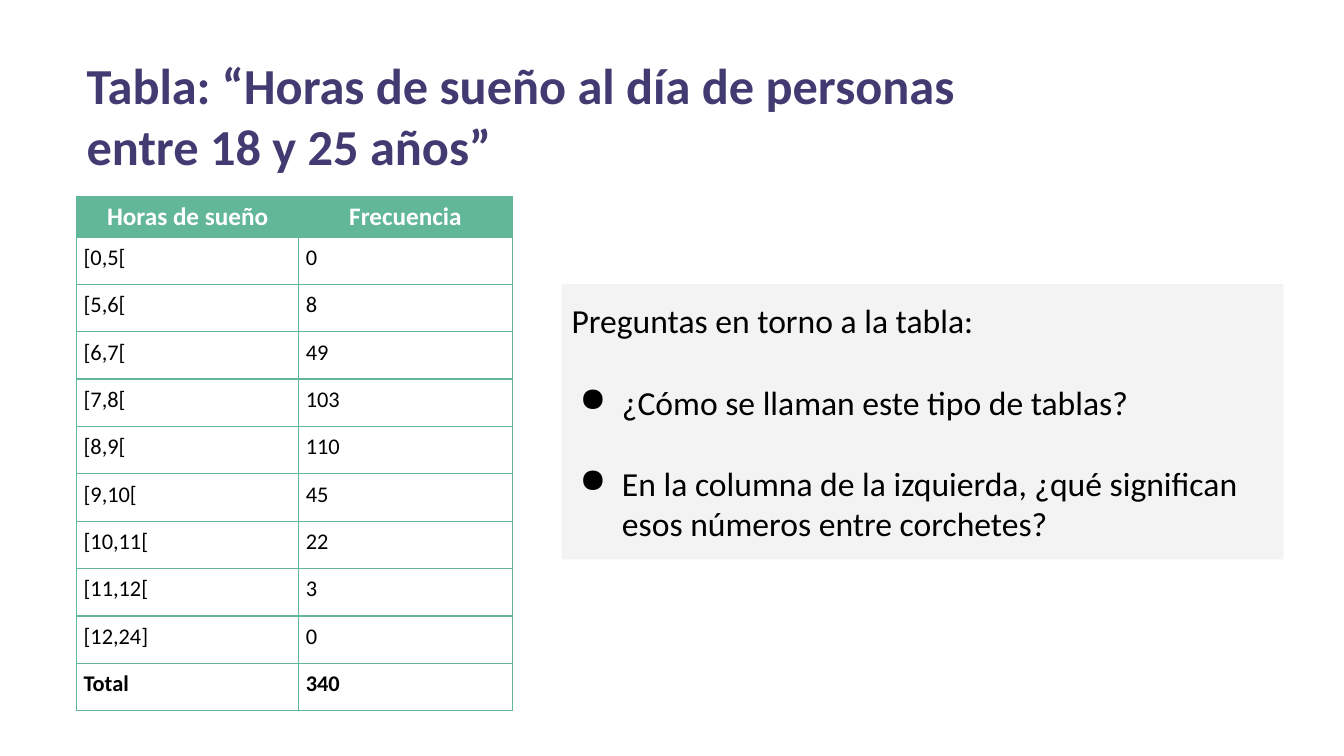
from lxml.etree import SubElement
from pptx import Presentation
from pptx.dml.color import RGBColor
from pptx.enum.shapes import MSO_SHAPE as Preset
from pptx.enum.text import MSO_ANCHOR as Anchor, PP_ALIGN as Align
from pptx.oxml import parse_xml
from pptx.oxml.ns import nsdecls, qn
from pptx.util import Inches, Pt

WIDTH, HEIGHT = Inches(13.33), Inches(7.5)
FONT = "Calibri"
PURPLE, GREEN, GREY, BLACK, WHITE = "423B71", "63B799", "F3F3F3", "000000", "FFFFFF"

TITLE = "Tabla: “Horas de sueño al día de personas entre 18 y 25 años”"
HEADINGS = ("Horas de sueño", "Frecuencia")
FREQUENCIES = [
    ("[0,5[", "0"), ("[5,6[", "8"), ("[6,7[", "49"), ("[7,8[", "103"),
    ("[8,9[", "110"), ("[9,10[", "45"), ("[10,11[", "22"),
    ("[11,12[", "3"), ("[12,24]", "0"), ("Total", "340"),
]
INTRO = "Preguntas en torno a la tabla:"
QUESTIONS = [
    "¿Cómo se llaman este tipo de tablas?",
    "En la columna de la izquierda, ¿qué significan esos números entre corchetes?",
]


def across(percent):
    return round(WIDTH * percent / 100)


def down(percent):
    return round(HEIGHT * percent / 100)


def area(left, top, width, height):
    """Turn percentages of the slide into a box."""
    return across(left), down(top), across(width), down(height)


def colour(code):
    return RGBColor.from_string(code)


def add_span(para, text, size, code, bold=False):
    span = para.add_run()
    span.text = text
    span.font.name = FONT
    span.font.size = Pt(size)
    span.font.bold = bold
    span.font.color.rgb = colour(code)


def set_margins(holder, side, end):
    holder.margin_left = holder.margin_right = Inches(side)
    holder.margin_top = holder.margin_bottom = Inches(end)


def add_borders(cell, code):
    props = cell._tc.get_or_add_tcPr()
    for index, side in enumerate("LRTB"):
        props.insert(index, parse_xml(
            f'<a:ln{side} {nsdecls("a")} w="{Pt(1)}"><a:solidFill>'
            f'<a:srgbClr val="{code}"/></a:solidFill></a:ln{side}>'))


def add_bullet(para):
    props = para._p.get_or_add_pPr()
    props.set("marL", str(Inches(0.5)))
    props.set("indent", str(Inches(-0.42)))
    tint = SubElement(props, qn("a:buClr"))
    SubElement(tint, qn("a:srgbClr"), val=BLACK)
    SubElement(props, qn("a:buChar"), char="●")


def add_title(page, box):
    frame = page.shapes.add_textbox(*box).text_frame
    frame.word_wrap = True
    set_margins(frame, 0.1, 0.05)
    add_span(frame.paragraphs[0], TITLE, 36, PURPLE, bold=True)


def add_frequency_table(page, box):
    rows = [HEADINGS, *FREQUENCIES]
    table = page.shapes.add_table(len(rows), len(HEADINGS), *box).table
    table.first_row = table.horz_banding = False

    # The first column is slightly wider, the header row slightly lower
    first_width, header_height = round(box[2] * 0.51), down(5.2)
    table.columns[0].width = first_width
    table.columns[1].width = box[2] - first_width
    for row in table.rows:
        row.height = (box[3] - header_height) // len(FREQUENCIES)
    table.rows[0].height = header_height

    for r, values in enumerate(rows):
        for c, value in enumerate(values):
            cell = table.cell(r, c)
            para = cell.text_frame.paragraphs[0]
            if r == 0:
                set_margins(cell, 0.1, 0.05)
                cell.vertical_anchor = Anchor.MIDDLE
                cell.fill.solid()
                cell.fill.fore_color.rgb = colour(GREEN)
                para.alignment = Align.CENTER
                add_span(para, value, 18, WHITE, bold=True)
            else:
                set_margins(cell, 0.07, 0.07)
                cell.fill.background()
                add_span(para, value, 16, BLACK, bold=values[0] == "Total")
            add_borders(cell, GREEN)


def add_questions(page, box):
    panel = page.shapes.add_shape(Preset.RECTANGLE, *box)
    panel.shadow.inherit = False
    panel.fill.solid()
    panel.fill.fore_color.rgb = colour(GREY)
    panel.line.fill.background()
    frame = panel.text_frame
    frame.word_wrap = True
    frame.vertical_anchor = Anchor.MIDDLE
    set_margins(frame, 0.1, 0.1)

    para = frame.paragraphs[0]
    para.alignment = Align.LEFT
    add_span(para, INTRO, 24, BLACK)
    for question in QUESTIONS:
        para = frame.add_paragraph()
        para.alignment = Align.LEFT
        para.space_before = Pt(29.3)
        add_bullet(para)
        add_span(para, question, 24, BLACK)


def main():
    deck = Presentation()
    deck.slide_width, deck.slide_height = WIDTH, HEIGHT
    page = deck.slides.add_slide(deck.slide_layouts[6])
    add_title(page, area(5.7, 6.53, 74.94, 17.47))
    add_frequency_table(page, area(5.7, 26, 32.41, 67.9))
    add_questions(page, area(41.79, 37.6, 53.71, 36.4))
    deck.save("out.pptx")


if __name__ == "__main__":
    main()
